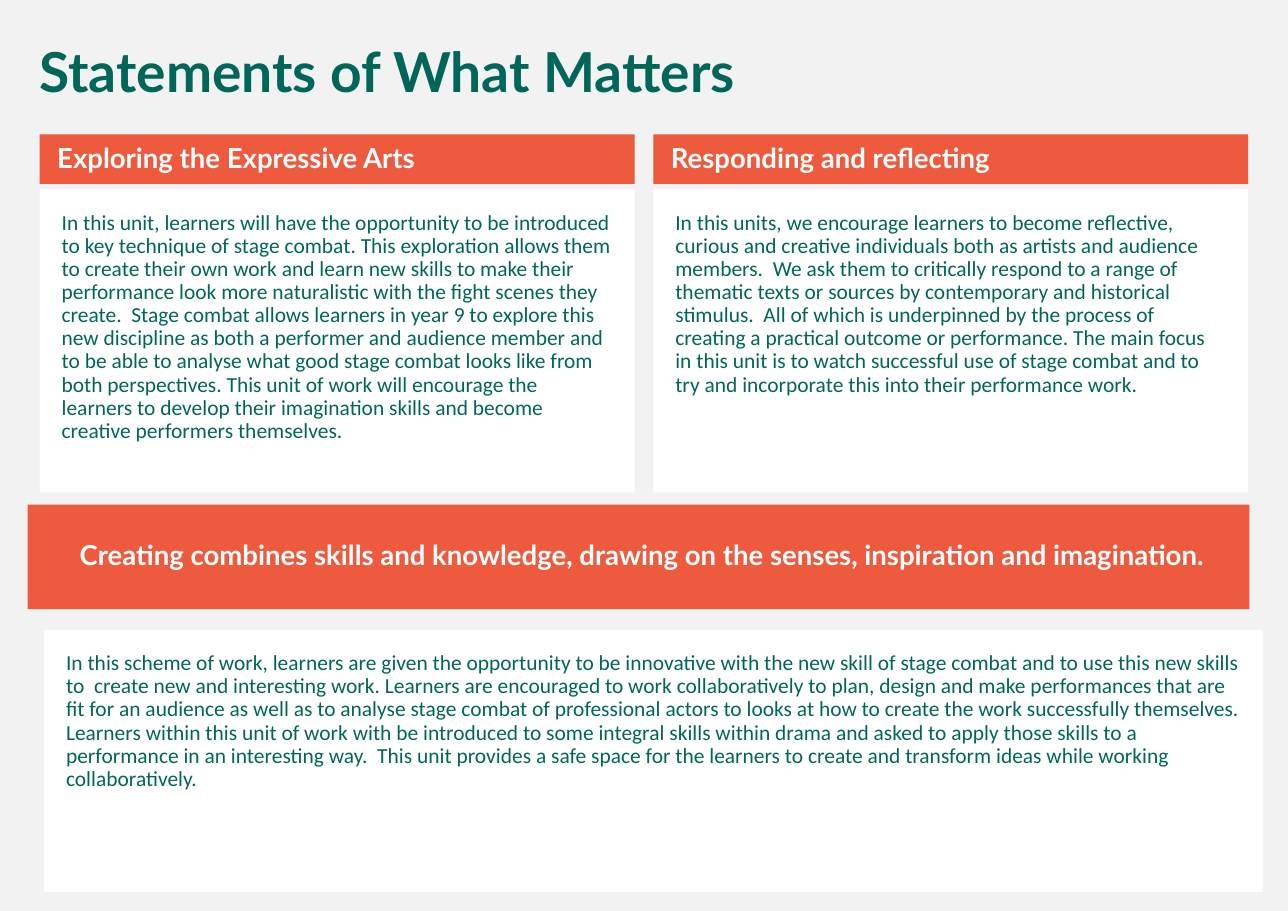
from pptx import Presentation
from pptx.dml.color import RGBColor
from pptx.enum.shapes import MSO_SHAPE
from pptx.enum.text import MSO_ANCHOR, PP_ALIGN
from pptx.util import Inches, Pt

RECTANGLE = MSO_SHAPE.RECTANGLE
TOP, MIDDLE = MSO_ANCHOR.TOP, MSO_ANCHOR.MIDDLE
LEFT, CENTER = PP_ALIGN.LEFT, PP_ALIGN.CENTER

COLORS = {"background": "F2F2F2", "panel": "FFFFFF", "heading": "ED5A3E",
          "green": "006758", "white": "FFFFFF"}

SLIDE_WIDTH, SLIDE_HEIGHT = 11.69, 8.27
MARGIN, COLUMN_WIDTH, GUTTER = 0.36, 5.4, 0.17
HEADING_ROW = (1.22, 0.45)
PANEL_ROW = (1.72, 2.75)
TITLE_BOX = (0.26, 0.36, 11.08, 0.65)
BANNER_BOX = (0.25, 4.58, 11.09, 0.95)
CREATING_BOX = (0.4, 5.72, 11.06, 2.38)

TITLE_INSETS = (0.1, 0.05, 0.1, 0.05)
HEADING_INSETS = (0.16, 0.05, 0.1, 0.05)
PANEL_INSETS = (0.2, 0.2, 0.2, 0.2)

COLUMNS = [
    ("Exploring the Expressive Arts ",
     "In this unit, learners will have the opportunity to be introduced to key technique of "
     "stage combat. This exploration allows them to create their own work and learn new skills "
     "to make their performance look more naturalistic with the fight scenes they create.  Stage "
     "combat allows learners in year 9 to explore this new discipline as both a performer and "
     "audience member and to be able to analyse what good stage combat looks like from both "
     "perspectives. This unit of work will encourage the learners to develop their imagination "
     "skills and become creative performers themselves. "),
    ("Responding and reflecting",
     "In this units, we encourage learners to become reflective, curious and creative individuals "
     "both as artists and audience members.  We ask them to critically respond to a range of "
     "thematic texts or sources by contemporary and historical stimulus.  All of which is "
     "underpinned by the process of creating a practical outcome or performance. The main focus "
     "in this unit is to watch successful use of stage combat and to try and incorporate this "
     "into their performance work. "),
]
BANNER = ("Creating combines skills and knowledge, drawing on the senses, "
          "inspiration and imagination.")
CREATING = (
    "In this scheme of work, learners are given the opportunity to be innovative with the new "
    "skill of stage combat and to use this new skills to  create new and interesting work. "
    "Learners are encouraged to work collaboratively to plan, design and make performances that "
    "are fit for an audience as well as to analyse stage combat of professional actors to looks "
    "at how to create the work successfully themselves. Learners within this unit of work with "
    "be introduced to some integral skills within drama and asked to apply those skills to a "
    "performance in an interesting way.  This unit provides a safe space for the learners to "
    "create and transform ideas while working collaboratively. ")


def color(name):
    return RGBColor.from_string(COLORS[name])


def write_text(shape, text, font, size, ink, insets, bold=False, anchor=TOP, align=LEFT):
    frame = shape.text_frame
    frame.word_wrap = True
    frame.vertical_anchor = anchor
    (frame.margin_left, frame.margin_top,
     frame.margin_right, frame.margin_bottom) = map(Inches, insets)
    paragraph = frame.paragraphs[0]
    paragraph.alignment = align
    paragraph.line_spacing = 0.9
    paragraph.space_before = Pt(11)
    run = paragraph.add_run()
    run.text = text
    run.font.name = font
    run.font.size = Pt(size)
    run.font.bold = bold
    run.font.color.rgb = color(ink)


def add_block(slide, box, fill):
    shape = slide.shapes.add_shape(RECTANGLE, *map(Inches, box))
    shape.shadow.inherit = False
    shape.fill.solid()
    shape.fill.fore_color.rgb = color(fill)
    shape.line.fill.background()
    return shape


def add_title(slide, box, text):
    shape = slide.shapes.add_textbox(*map(Inches, box))
    write_text(shape, text, "Lato", 36, "green", TITLE_INSETS, bold=True)


def add_heading(slide, box, text, align=LEFT):
    shape = add_block(slide, box, "heading")
    write_text(shape, text, "Lato", 18, "white", HEADING_INSETS, True, MIDDLE, align)


def add_panel(slide, box, text):
    shape = add_block(slide, box, "panel")
    write_text(shape, text, "Calibri", 14, "green", PANEL_INSETS)


def column_box(index, row):
    top, height = row
    return MARGIN + index * (COLUMN_WIDTH + GUTTER), top, COLUMN_WIDTH, height


def main():
    presentation = Presentation()
    presentation.slide_width = Inches(SLIDE_WIDTH)
    presentation.slide_height = Inches(SLIDE_HEIGHT)
    slide = presentation.slides.add_slide(presentation.slide_layouts[6])
    slide.background.fill.solid()
    slide.background.fill.fore_color.rgb = color("background")

    add_title(slide, TITLE_BOX, "Statements of What Matters")
    for index, (heading, body) in enumerate(COLUMNS):
        add_heading(slide, column_box(index, HEADING_ROW), heading)
        add_panel(slide, column_box(index, PANEL_ROW), body)
    add_heading(slide, BANNER_BOX, BANNER, CENTER)
    add_panel(slide, CREATING_BOX, CREATING)
    presentation.save("out.pptx")


if __name__ == "__main__":
    main()
